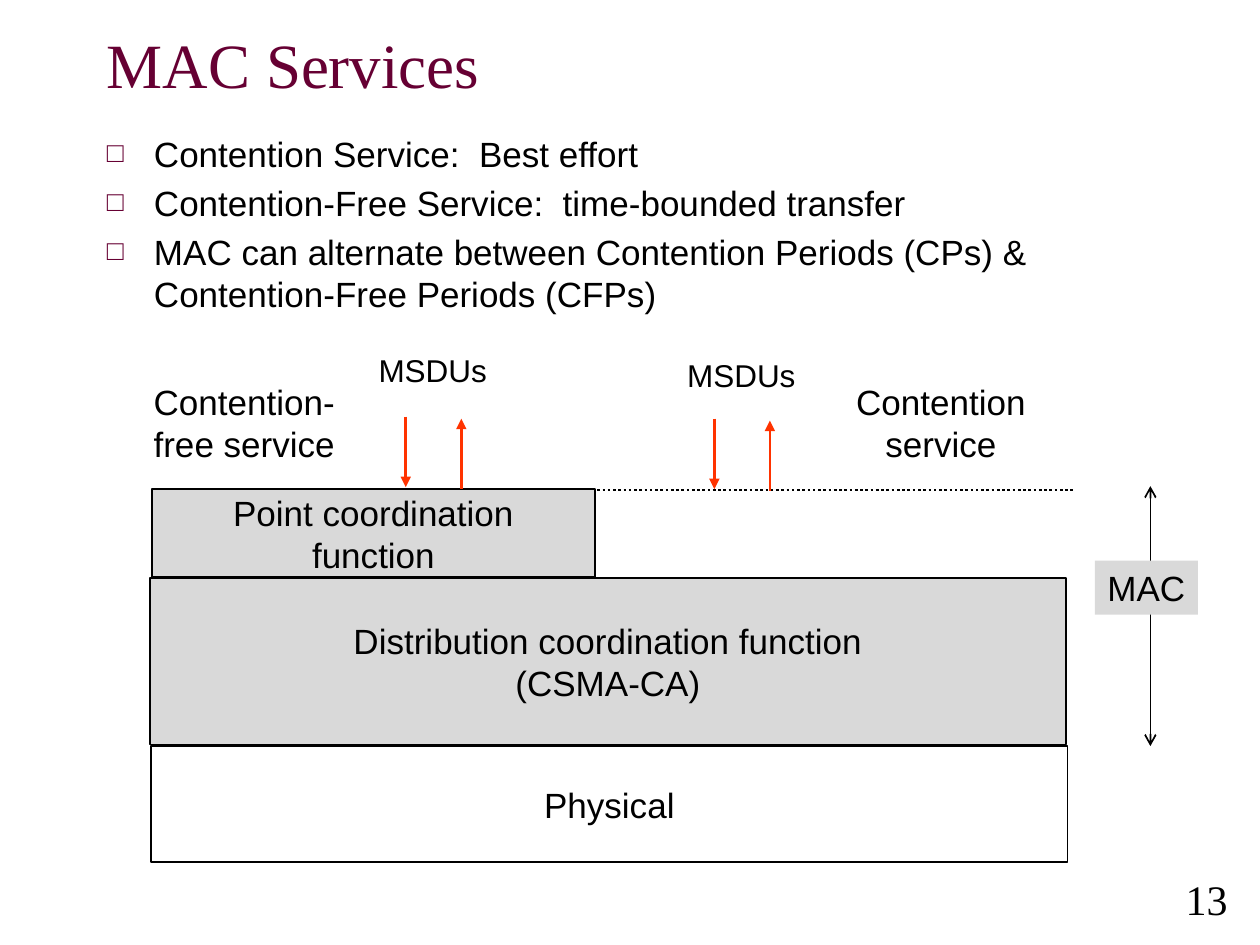
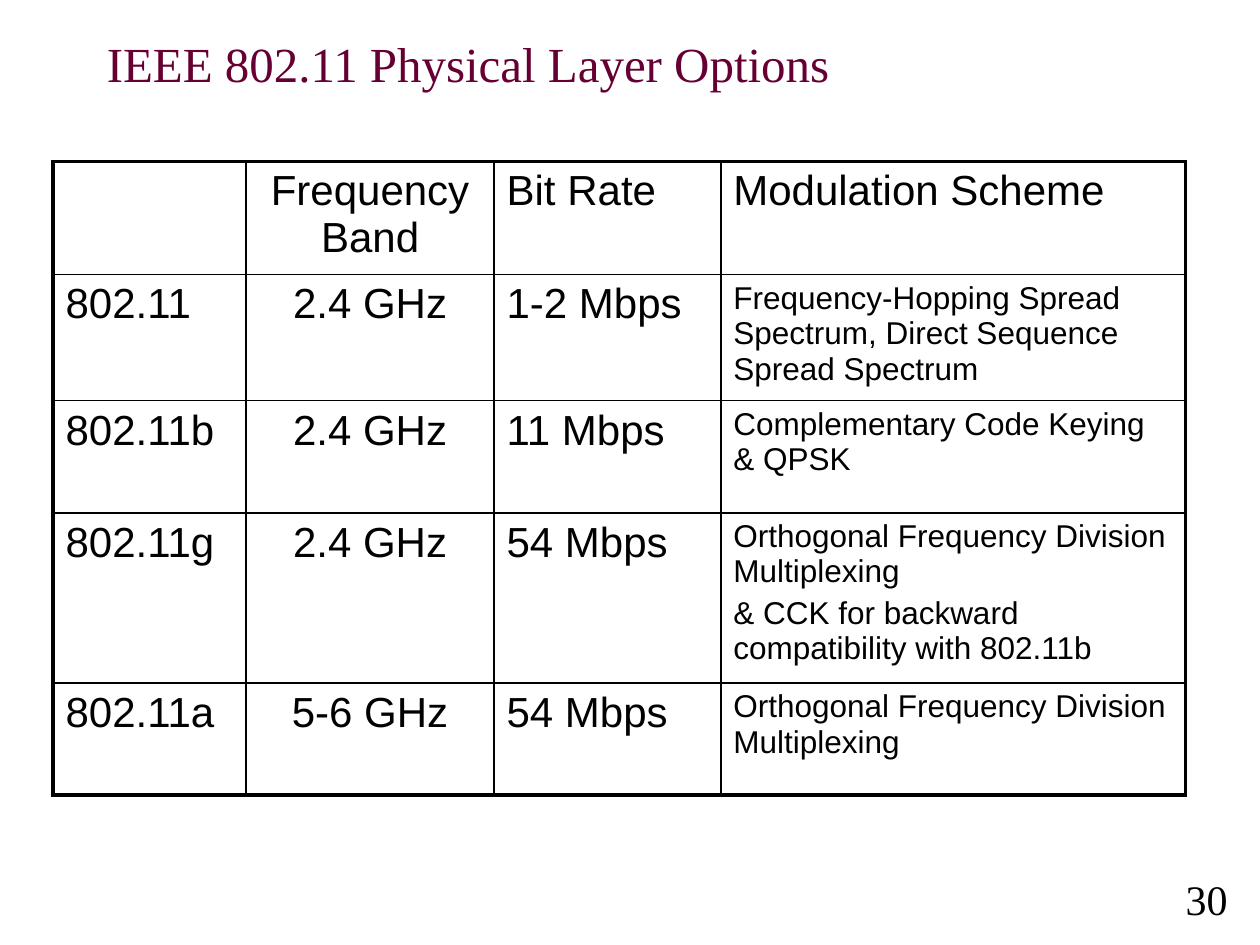
"""Build two slides on MAC services and physical layer options."""
from typing import NamedTuple, Optional

from pptx import Presentation
from pptx.dml.color import RGBColor
from pptx.enum.dml import MSO_LINE
from pptx.enum.shapes import MSO_CONNECTOR, MSO_SHAPE
from pptx.enum.text import MSO_ANCHOR, MSO_AUTO_SIZE, PP_ALIGN
from pptx.oxml.ns import qn
from pptx.util import Cm, Pt
from lxml import etree

BLACK = RGBColor(0x00, 0x00, 0x00)
WHITE = RGBColor(0xFF, 0xFF, 0xFF)
GREY = RGBColor(0xD9, 0xD9, 0xD9)
WINE = RGBColor(0x66, 0x00, 0x33)
RED = RGBColor(0xFF, 0x33, 0x00)
SANS, SERIF = "Arial", "Times New Roman"
LEFT, MID, RIGHT = PP_ALIGN.LEFT, PP_ALIGN.CENTER, PP_ALIGN.RIGHT
TOP, CENTRE = MSO_ANCHOR.TOP, MSO_ANCHOR.MIDDLE
RECT, LINE = MSO_SHAPE.RECTANGLE, MSO_CONNECTOR.STRAIGHT
DOTS, FIXED = MSO_LINE.ROUND_DOT, MSO_AUTO_SIZE.NONE
LEAD = 1.2


class Box(NamedTuple):
    """A rectangle or label, with lengths in centimetres."""
    text: str
    x: float
    y: float
    w: float
    h: float
    fill: Optional[RGBColor] = None
    edge: bool = False
    wrap: bool = False
    size: int = 20
    anchor: MSO_ANCHOR = CENTRE


class Rule(NamedTuple):
    """A straight line, with lengths in centimetres."""
    x1: float
    y1: float
    x2: float
    y2: float
    color: RGBColor = BLACK
    width: float = 1.5
    head: str = ""
    tail: str = ""
    dots: bool = False


class Flow(NamedTuple):
    """A labelled pair of arrows, one down and one up."""
    x: float
    y: float
    note: float


POINTS = (
    "Contention Service:  Best effort",
    "Contention-Free Service:  time-bounded transfer",
    "MAC can alternate between Contention Periods (CPs) & "
    "Contention-Free Periods (CFPs)",
)
SPAN = Rule(23.19, 9.8, 23.19, 15.04, width=1, head="arrow", tail="arrow")
LAYERS = (
    Box("Physical", 3.05, 15.04, 18.47, 2.34, WHITE, True),
    Box("Distribution coordination function\n(CSMA-CA)",
        3.02, 11.66, 18.47, 3.35, GREY, True),
    Box("Point coordination\nfunction", 3.07, 9.86, 8.92, 1.78, GREY, True),
    Box("Contention-free service", 2.84, 7.54, 4.17, 1.96, wrap=True),
    Box("Contention service", 16.43, 7.54, 5.08, 1.96, wrap=True),
    Box("MAC", 22.07, 11.3, 2.08, 1.09, GREY),
)
LIMIT = Rule(12.04, 9.88, 21.67, 9.88, dots=True)
FLOWS = (Flow(8.18, 8.4, 6.96), Flow(14.4, 8.44, 7.06))

COLS = (3.89, 5.0, 4.57, 9.37)
ROW = 2.26
OPTIONS = (
    ("", "Frequency Band", "Bit Rate", "Modulation Scheme"),
    ("802.11", "2.4 GHz", "1-2 Mbps",
     "Frequency-Hopping Spread Spectrum, Direct Sequence Spread Spectrum"),
    ("802.11b", "2.4 GHz", "11 Mbps", "Complementary Code Keying & QPSK"),
    ("802.11g", "2.4 GHz", "54 Mbps",
     "Orthogonal Frequency Division Multiplexing\n"
     "& CCK for backward compatibility with 802.11b"),
    ("802.11a", "5-6 GHz", "54 Mbps",
     "Orthogonal Frequency Division Multiplexing"),
)


def write(frame, text: str, size: float, font: str = SANS,
          color: RGBColor = BLACK, align: PP_ALIGN = LEFT,
          lead: float = 0, gap: float = 0) -> None:
    """Fill a text frame and format its paragraphs and runs."""
    frame.text = text
    for i, para in enumerate(frame.paragraphs):
        para.alignment = align
        para.space_before = Pt(gap if i else 0)
        if lead:
            para.line_spacing = Pt(size * lead)
        for run in para.runs:
            run.font.name = font
            run.font.size = Pt(size)
            run.font.color.rgb = color


def place(shape, x: float, y: float, w: float, h: float) -> None:
    """Move and size a shape."""
    shape.left, shape.top = Cm(x), Cm(y)
    shape.width, shape.height = Cm(w), Cm(h)


def draw_box(slide, box: Box) -> None:
    """Draw a filled rectangle or a plain label."""
    spot = [Cm(v) for v in (box.x, box.y, box.w, box.h)]
    if box.fill is None:
        shape = slide.shapes.add_textbox(*spot)
    else:
        shape = slide.shapes.add_shape(RECT, *spot)
        shape.shadow.inherit = False
        shape.fill.solid()
        shape.fill.fore_color.rgb = box.fill
        if box.edge:
            shape.line.color.rgb = BLACK
            shape.line.width = Pt(1)
        else:
            shape.line.fill.background()
    frame = shape.text_frame
    frame.word_wrap = box.wrap
    frame.vertical_anchor = box.anchor
    write(frame, box.text, box.size, align=MID, lead=LEAD)


def draw_rule(slide, rule: Rule) -> None:
    """Draw a line with its dash and arrowheads."""
    line = slide.shapes.add_connector(
        LINE, Cm(rule.x1), Cm(rule.y1), Cm(rule.x2), Cm(rule.y2))
    line.line.color.rgb = rule.color
    line.line.width = Pt(rule.width)
    if rule.dots:
        line.line.dash_style = DOTS
    props = line._element.spPr
    edge = props.find(qn("a:ln"))
    for tag, kind in (("a:headEnd", rule.head), ("a:tailEnd", rule.tail)):
        if kind:
            etree.SubElement(edge, qn(tag), type=kind)
    etree.SubElement(props, qn("a:effectLst"))


def draw_flow(slide, flow: Flow) -> None:
    """Draw the down and up arrows with their label."""
    for x, y, ends in ((flow.x, flow.y, {"tail": "triangle"}),
                       (flow.x + 1.12, flow.y + 0.04, {"head": "triangle"})):
        draw_rule(slide, Rule(x, y, x, y + 1.42, RED, **ends))
    draw_box(slide, Box("MSDUs", flow.x - 0.8, flow.note, 2.69, 1.02,
                        size=18, anchor=TOP))


def add_list(frame, items: tuple[str, ...]) -> None:
    """Write a list with square bullets."""
    frame.auto_size = FIXED
    frame.text = "\n".join(items)
    for para in frame.paragraphs:
        props = para._p.get_or_add_pPr()
        props.set("marL", str(Cm(0.95)))
        props.set("indent", str(-Cm(0.95)))
        tint = etree.SubElement(props, qn("a:buClr"))
        etree.SubElement(tint, qn("a:srgbClr"), val=str(WINE))
        etree.SubElement(props, qn("a:buSzPct"), val="80000")
        etree.SubElement(props, qn("a:buFont"), typeface=SANS)
        etree.SubElement(props, qn("a:buChar"), char="□")
    for i, para in enumerate(frame.paragraphs):
        para.space_before = Pt(4 if i else 0)
        para.line_spacing = Pt(20 * LEAD)
        for run in para.runs:
            run.font.name = SANS
            run.font.size = Pt(20)
            run.font.color.rgb = BLACK


def edge_cell(cell, sides: dict[str, bool]) -> None:
    """Give a cell its borders, thick where it meets the frame."""
    props = cell._tc.get_or_add_tcPr()
    for side, thick in sides.items():
        width = Pt(2.25 if thick else 1)
        edge = etree.SubElement(props, qn(f"a:ln{side}"), w=str(width))
        fill = etree.SubElement(edge, qn("a:solidFill"))
        etree.SubElement(fill, qn("a:srgbClr"), val=str(BLACK))
    cell.fill.background()


def add_grid(slide) -> None:
    """Draw the table of physical layer options."""
    rows, cols = len(OPTIONS), len(COLS)
    grid = slide.shapes.add_table(
        rows, cols, Cm(1.07), Cm(3.25), Cm(sum(COLS)), Cm(ROW * rows)).table
    grid.first_row = grid.horz_banding = False
    for col, width in zip(grid.columns, COLS):
        col.width = Cm(width)
    for r, texts in enumerate(OPTIONS):
        for c, text in enumerate(texts):
            cell = grid.cell(r, c)
            size = 18 if r and c == cols - 1 else 24
            write(cell.text_frame, text, size, align=MID if c == 1 else LEFT,
                  gap=size * 0.2)
            edge_cell(cell, {"L": c == 0, "R": c == cols - 1,
                             "T": r == 0, "B": r == rows - 1})


def add_page(deck, layout: int, title: str, size: int, number: int):
    """Add a slide with its title and number."""
    slide = deck.slides.add_slide(deck.slide_layouts[layout])
    head = slide.shapes.title
    place(head, 1.9, 0, 21.59, 2.54)
    head.text_frame.auto_size = FIXED
    head.text_frame.vertical_anchor = CENTRE
    write(head.text_frame, title, size, SERIF, WINE)
    foot = slide.shapes.add_textbox(Cm(21.82), Cm(17.48), Cm(3.18), Cm(1.3))
    foot.text_frame.word_wrap = True
    write(foot.text_frame, str(number), 24, SERIF, align=RIGHT)
    return slide


def main() -> None:
    """Build and save the deck."""
    deck = Presentation()
    deck.slide_width, deck.slide_height = Cm(25.4), Cm(19.05)

    slide = add_page(deck, 1, "MAC Services", 36, 13)
    body = slide.placeholders[1]
    place(body, 1.9, 2.54, 21.8, 14.4)
    add_list(body.text_frame, POINTS)
    draw_rule(slide, SPAN)
    for box in LAYERS:
        draw_box(slide, box)
    draw_rule(slide, LIMIT)
    for flow in FLOWS:
        draw_flow(slide, flow)

    slide = add_page(deck, 5, "IEEE 802.11 Physical Layer Options", 28, 30)
    add_grid(slide)
    deck.save("out.pptx")


if __name__ == "__main__":
    main()
